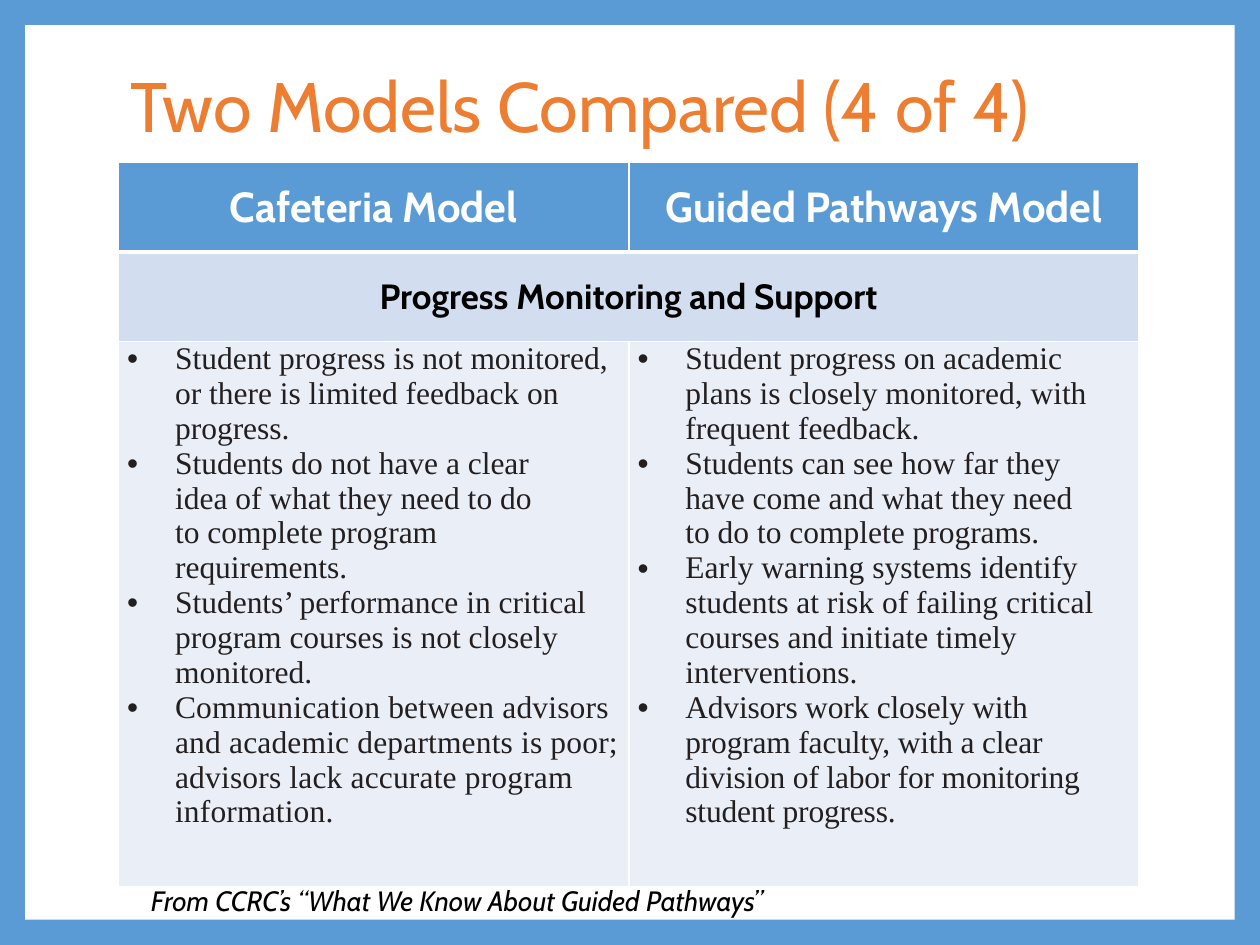
import pptx
import pptx.util
import pptx.dml.color
import pptx.enum.shapes
import pptx.enum.text
import pptx.oxml
import lxml.etree
from pptx.oxml.ns import qn

Inches = pptx.util.Inches
Pt = pptx.util.Pt
RGB = pptx.dml.color.RGBColor
Align = pptx.enum.text.PP_ALIGN
Anchor = pptx.enum.text.MSO_ANCHOR

BLUE = RGB(0x5B, 0x9B, 0xD5)
ORANGE = RGB(0xED, 0x7D, 0x31)
WHITE = RGB(0xFF, 0xFF, 0xFF)
BLACK = RGB(0, 0, 0)
INK = RGB(0x23, 0x1F, 0x20)
BAND = RGB(0xD2, 0xDE, 0xEF)
PALE = RGB(0xEA, 0xEF, 0xF7)

HEADS = ["Cafeteria Model", "Guided Pathways Model"]
TOPIC = "Progress Monitoring and Support"
POINTS = [
    [
        ("Student progress is not monitored, or there is limited feedback on progress.", 0, 0),
        ("Students do not have a clear idea of what they need to do to complete program requirements.", 0.5, 0),
        ("Students’ performance in critical program courses is not closely monitored.", 0, 0),
        ("Communication between advisors and academic departments is poor; "
         "advisors lack accurate program information.", 0, 10),
    ],
    [
        ("Student progress on academic plans is closely monitored, with frequent feedback.", 0, 0),
        ("Students can see how far they have come and what they need to do to complete programs.", 0.25, 0),
        ("Early warning systems identify students at risk of failing critical courses "
         "and initiate timely interventions.", 0, 0),
        ("Advisors work closely with program faculty, with a clear division of labor "
         "for monitoring student progress.", 0, -10),
    ],
]


def style(para, name, size, color, bold=False, italic=False):
    font = para.font
    font.name, font.size = name, Pt(size)
    font.bold, font.italic = bold, italic
    font.color.rgb = color


def add_text(slide, box, text, size, color, anchor, italic=False):
    frame = slide.shapes.add_textbox(*map(Inches, box)).text_frame
    frame.word_wrap = True
    frame.vertical_anchor = anchor
    para = frame.paragraphs[0]
    para.text = text
    style(para, "Cabin", size, color, italic=italic)
    return para


def add_panel(slide, box):
    kind = pptx.enum.shapes.MSO_SHAPE.RECTANGLE
    panel = slide.shapes.add_shape(kind, *map(Inches, box))
    panel.shadow.inherit = False
    panel.fill.solid()
    panel.fill.fore_color.rgb = WHITE
    panel.line.fill.background()


def paint(cell, color, top=1, bottom=1):
    cell.fill.solid()
    cell.fill.fore_color.rgb = color
    props = cell._tc.get_or_add_tcPr()
    widths = {"lnL": 1, "lnR": 1, "lnT": top, "lnB": bottom}
    for spot, (tag, width) in enumerate(widths.items()):
        line = lxml.etree.Element(qn("a:" + tag), w=str(Pt(width)))
        fill = lxml.etree.SubElement(line, qn("a:solidFill"))
        lxml.etree.SubElement(fill, qn("a:srgbClr"), val=str(WHITE))
        props.insert(spot, line)


def add_label(cell, text, size, color):
    cell.vertical_anchor = Anchor.MIDDLE
    para = cell.text_frame.paragraphs[0]
    para.text = text
    para.alignment = Align.CENTER
    style(para, "Cabin", size, color, bold=True)


def add_points(cell, points):
    cell.margin_left = cell.margin_right = Inches(0.07)
    cell.margin_top = cell.margin_bottom = 0
    frame = cell.text_frame
    for num, (text, right, space) in enumerate(points):
        para = frame.add_paragraph() if num else frame.paragraphs[0]
        run = para.add_run()
        run.text = text
        style(para, "Times New Roman", 18, INK)
        if space:
            run.font._element.set("spc", str(space))
        props = para._p.get_or_add_pPr()
        props.set("marL", str(Inches(0.38)))
        props.set("marR", str(Inches(right)))
        props.set("indent", str(-Inches(0.38)))
        mark = lxml.etree.Element(qn("a:buClr"))
        lxml.etree.SubElement(mark, qn("a:srgbClr"), val=str(INK))
        face = lxml.etree.Element(qn("a:buFont"), typeface="Arial")
        sign = lxml.etree.Element(qn("a:buChar"), char="•")
        for spot, part in enumerate((mark, face, sign)):
            props.insert(spot, part)


def add_grid(slide, box):
    table = slide.shapes.add_table(3, 2, *map(Inches, box)).table
    table.first_row = table.horz_banding = False
    for col in table.columns:
        col.width = Inches(box[2] / 2)
    for row, high in zip(table.rows, (0.71, 0.71, box[3] - 1.42)):
        row.height = Inches(high)
    for col, (head, points) in enumerate(zip(HEADS, POINTS)):
        paint(table.cell(0, col), BLUE, bottom=3)
        paint(table.cell(1, col), BAND, top=3)
        paint(table.cell(2, col), PALE)
        add_label(table.cell(0, col), head, 24, WHITE)
        add_points(table.cell(2, col), points)
    table.cell(1, 0).merge(table.cell(1, 1))
    add_label(table.cell(1, 0), TOPIC, 20, BLACK)


def main():
    deck = pptx.Presentation()
    deck.slide_width, deck.slide_height = Inches(10), Inches(7.5)
    slide = deck.slides.add_slide(deck.slide_layouts[6])
    slide.background.fill.solid()
    slide.background.fill.fore_color.rgb = BLUE
    add_panel(slide, (0.2, 0.2, 9.6, 7.1))
    title = add_text(slide, (0.94, 0.13, 8.1, 1.48), "Two Models Compared (4 of 4)",
                     40, ORANGE, Anchor.MIDDLE)
    title.line_spacing = 0.9
    add_grid(slide, (0.94, 1.29, 8.1, 5.75))
    add_text(slide, (1.1, 6.96, 7.54, 0.37), "From CCRC’s “What We Know About Guided Pathways”",
             16, BLACK, Anchor.TOP, italic=True)
    deck.save("out.pptx")


if __name__ == "__main__":
    main()
